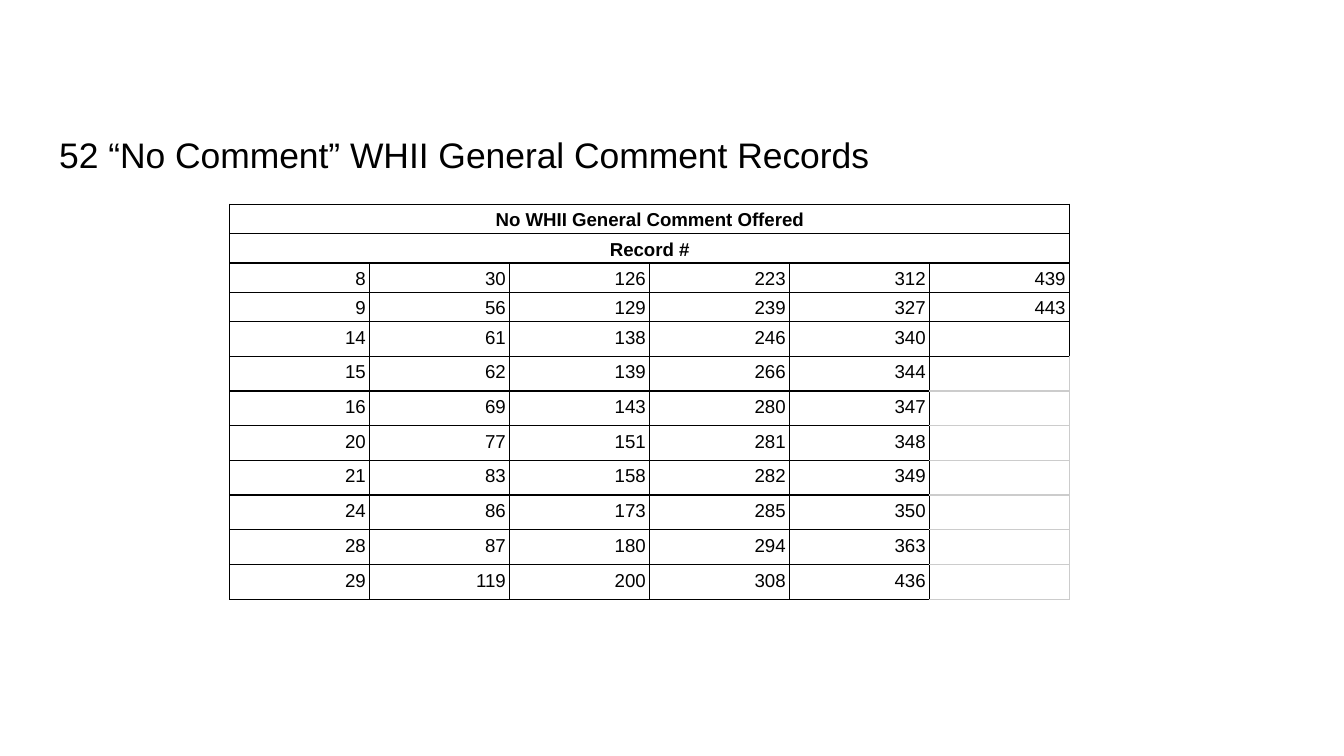
import pptx
import pptx.dml.color
import pptx.enum.text
import pptx.util
from dataclasses import dataclass
from lxml import etree
from pptx.oxml.ns import qn

Inches = pptx.util.Inches
Pt = pptx.util.Pt
ALIGN = pptx.enum.text.PP_ALIGN
ANCHOR = pptx.enum.text.MSO_ANCHOR


@dataclass
class Theme:
    font: str = "Arial"
    ink: str = "000000"
    pale: str = "CCCCCC"
    title_size: int = 19
    cell_size: int = 10
    empty_size: int = 14
    border: float = 0.83


theme = Theme()


def style(p, size, align, bold=False):
    p.alignment = align
    p.font.name = theme.font
    p.font.size = Pt(size)
    p.font.bold = bold
    p.font.color.rgb = pptx.dml.color.RGBColor.from_string(theme.ink)


def set_borders(cell, left, right, top, bottom):
    tcPr = cell._tc.get_or_add_tcPr()
    for side, color in zip("LRTB", (left, right, top, bottom)):
        ln = etree.SubElement(tcPr, qn(f"a:ln{side}"), w=str(Pt(theme.border)))
        fill = etree.SubElement(ln, qn("a:solidFill"))
        etree.SubElement(fill, qn("a:srgbClr"), val=color)


# 16:9 slide
prs = pptx.Presentation()
prs.slide_width = Inches(10)
prs.slide_height = prs.slide_width * 9 // 16
s = prs.slides.add_slide(prs.slide_layouts[5])

# Title
title = s.shapes.title
title.left, title.top = Inches(0.34), Inches(0.89)
title.width, title.height = Inches(9.32), Inches(0.63)
tf = title.text_frame
tf.word_wrap = True
tf.auto_size = pptx.enum.text.MSO_AUTO_SIZE.NONE
tf.vertical_anchor = ANCHOR.TOP
tf.margin_left = tf.margin_right = tf.margin_top = tf.margin_bottom = Inches(0.1)
tf.text = "52 “No Comment” WHII General Comment Records"
style(tf.paragraphs[0], theme.title_size, ALIGN.LEFT)

# Record numbers, one list per table column
headings = ["No WHII General Comment Offered", "Record #"]
records = [
    [8, 9, 14, 15, 16, 20, 21, 24, 28, 29],
    [30, 56, 61, 62, 69, 77, 83, 86, 87, 119],
    [126, 129, 138, 139, 143, 151, 158, 173, 180, 200],
    [223, 239, 246, 266, 280, 281, 282, 285, 294, 308],
    [312, 327, 340, 344, 347, 348, 349, 350, 363, 436],
    [439, 443],
]
n_heads, n_cols = len(headings), len(records)
n_rows = n_heads + len(records[0])
first_pale = n_heads + len(records[-1]) + 1

# Table
table = s.shapes.add_table(n_rows, n_cols, Inches(1.71), Inches(1.52),
                           Inches(6.25), Inches(0.21 * n_rows)).table
table.first_row = table.horz_banding = False
for row in table.rows:
    row.height = Inches(0.21)
for row in range(n_heads):
    table.cell(row, 0).merge(table.cell(row, n_cols - 1))

for row in range(n_rows):
    for col in range(n_cols):
        cell = table.cell(row, col)
        cell.margin_left = cell.margin_right = Inches(0.03)
        cell.margin_top = cell.margin_bottom = Inches(0.02)
        cell.vertical_anchor = ANCHOR.TOP

        # Unused cells of the last column have pale edges
        pale = col == n_cols - 1 and row >= first_pale
        edge = theme.pale if pale else theme.ink
        top = theme.ink if row == first_pale else edge
        set_borders(cell, theme.ink, edge, top, edge)
        cell.fill.background()

        p = cell.text_frame.paragraphs[0]
        if row < n_heads and col == 0:
            p.text = headings[row]
            p.line_spacing = 1.15
            style(p, theme.cell_size, ALIGN.CENTER, bold=True)
        elif row >= n_heads and row - n_heads < len(records[col]):
            p.text = str(records[col][row - n_heads])
            p.line_spacing = 1.15
            style(p, theme.cell_size, ALIGN.RIGHT)
        else:
            # The size of an empty line sets the height of its row
            size = theme.cell_size if cell.is_spanned else theme.empty_size
            end = etree.SubElement(p._p, qn("a:endParaRPr"), sz=str(size * 100))
            etree.SubElement(end, qn("a:latin"), typeface=theme.font)

prs.save("out.pptx")
